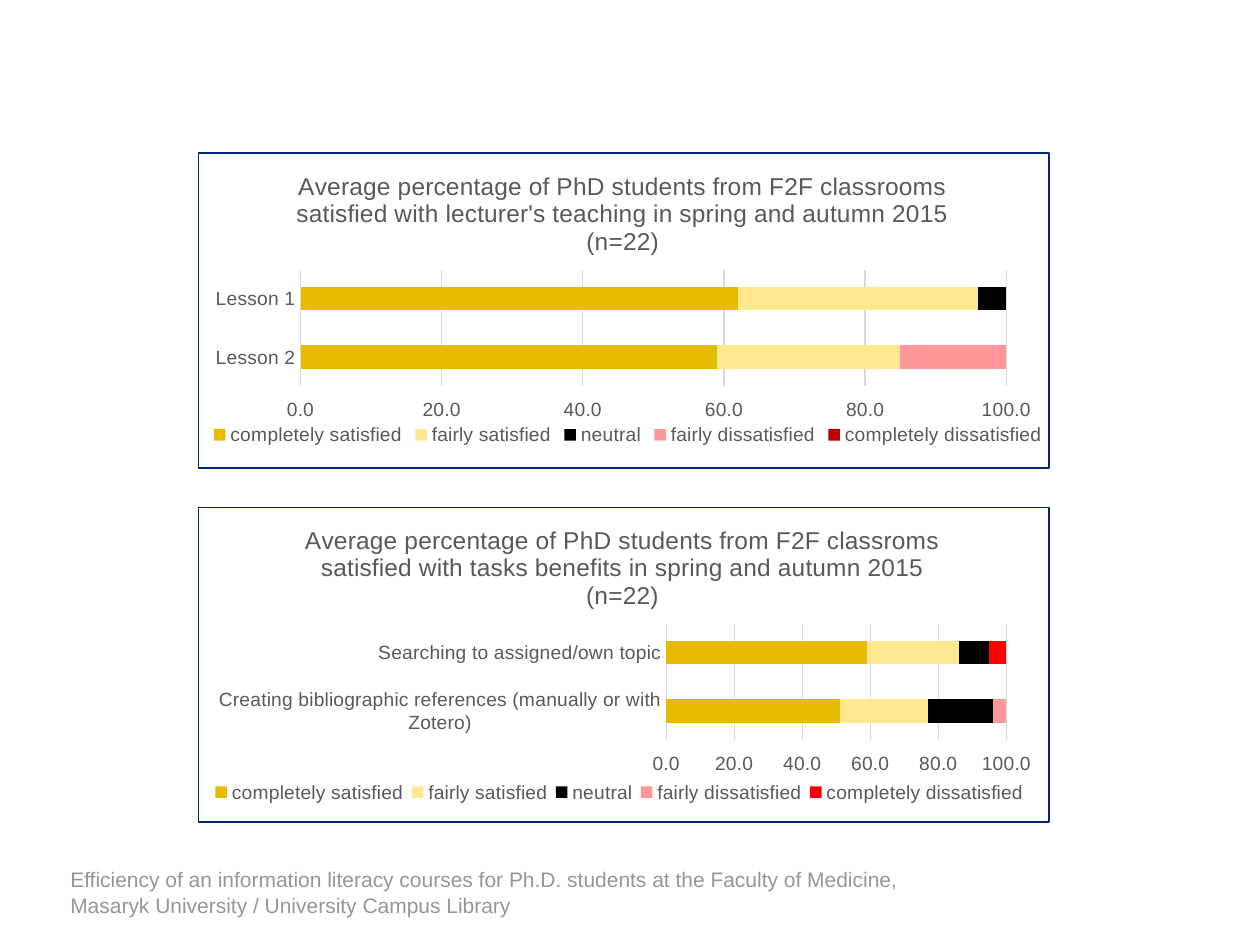
from lxml import etree
from pptx import Presentation
from pptx.chart.data import CategoryChartData
from pptx.dml.color import RGBColor
from pptx.enum import chart as ch, text
from pptx.oxml import parse_xml
from pptx.oxml.ns import nsdecls, qn
from pptx.util import Inches, Pt

COLORS = {
    "footer": "969696",
    "label": "595959",
    "grid": "D9D9D9",
    "border": "00287D",
    "paper": "FFFFFF",
    "gold": "E7BB01",
    "cream": "FFE990",
    "black": "000000",
    "pink": "FF9999",
    "dark_red": "C00000",
    "red": "FF0000",
}
ANSWERS = ["completely satisfied", "fairly satisfied", "neutral",
           "fairly dissatisfied", "completely dissatisfied"]
ANSWER_COLORS = ["gold", "cream", "black", "pink"]


def rgb(name):
    return RGBColor.from_string(COLORS[name])


def style_font(font, size, color):
    font.name = "Arial"
    font.size = Pt(size)
    font.bold = False
    font.color.rgb = rgb(color)


def write(frame, wording, size=12, color="label", align=None):
    paragraph = frame.paragraphs[0]
    paragraph.alignment = align
    run = paragraph.add_run()
    run.text = wording
    style_font(run.font, size, color)


def place(parent, before, inner=False, **fractions):
    for old in parent.findall(qn("c:layout")):
        parent.remove(old)
    layout = parse_xml(f"<c:layout {nsdecls('c')}><c:manualLayout/></c:layout>")
    settings = {"layoutTarget": "inner"} if inner else {}
    settings.update(xMode="edge", yMode="edge", **fractions)
    for tag, value in settings.items():
        etree.SubElement(layout[0], qn(f"c:{tag}")).set("val", str(value))
    parent.find(qn(f"c:{before}")).addprevious(layout)


class SurveySlide:
    def __init__(self, deck):
        self.slide = deck.slides.add_slide(deck.slide_layouts[6])

    def footer(self, wording, left, top, width, height):
        frame = self.slide.shapes.add_textbox(
            Inches(left), Inches(top), Inches(width), Inches(height)).text_frame
        frame.word_wrap = True
        frame.vertical_anchor = text.MSO_ANCHOR.BOTTOM
        write(frame, wording, color="footer")

    def survey(self, top, title, title_x, lessons, ratings, last_color, plot, legend):
        data = CategoryChartData(number_format="0.0")
        data.categories = lessons
        for answer, values in zip(ANSWERS, ratings):
            data.add_series(answer, values)
        chart = self.slide.shapes.add_chart(
            ch.XL_CHART_TYPE.BAR_STACKED, Inches(1.57), Inches(top),
            Inches(6.76), Inches(2.51), data).chart
        style_font(chart.font, 10, "black")
        self.border(chart)
        self.title(chart, title, title_x)
        self.axes(chart)
        bars = chart.plots[0]
        bars.gap_width = 150
        bars.overlap = 100
        bars.vary_by_categories = False
        for series, color in zip(bars.series, ANSWER_COLORS + [last_color]):
            series.format.fill.solid()
            series.format.fill.fore_color.rgb = rgb(color)
        chart.has_legend = True
        chart.legend.position = ch.XL_LEGEND_POSITION.BOTTOM
        chart.legend.include_in_layout = False
        style_font(chart.legend.font, 11, "label")
        chart_xml = chart.element.find(qn("c:chart"))
        place(chart_xml.find(qn("c:legend")), "overlay", **legend)
        place(chart_xml.find(qn("c:plotArea")), "barChart", inner=True, **plot)

    def border(self, chart):
        chart.element.find(qn("c:chart")).addnext(parse_xml(
            f"<c:spPr {nsdecls('c', 'a')}>"
            f"<a:solidFill><a:srgbClr val='{COLORS['paper']}'/></a:solidFill>"
            f"<a:ln w='{Pt(0.75)}'><a:solidFill>"
            f"<a:srgbClr val='{COLORS['border']}'/></a:solidFill></a:ln></c:spPr>"))

    def title(self, chart, wording, x):
        chart.has_title = True
        write(chart.chart_title.text_frame, wording, size=14,
              align=text.PP_ALIGN.CENTER)
        chart.chart_title.include_in_layout = False
        place(chart.element.find(qn("c:chart")).find(qn("c:title")),
              "overlay", x=x, y=0.04)

    def axes(self, chart):
        for axis in (chart.category_axis, chart.value_axis):
            axis.major_tick_mark = axis.minor_tick_mark = ch.XL_TICK_MARK.NONE
            style_font(axis.tick_labels.font, 11, "label")
        lessons, percent = chart.category_axis, chart.value_axis
        lessons.reverse_order = True
        percent.tick_label_position = ch.XL_TICK_LABEL_POSITION.HIGH
        percent.minimum_scale = 0
        percent.maximum_scale = 100
        percent.major_unit = 20
        percent.has_major_gridlines = True
        percent.tick_labels.number_format = "0.0"
        percent.tick_labels.number_format_is_linked = False
        percent.format.line.fill.background()
        for line in (lessons.format.line, percent.major_gridlines.format.line):
            line.width = Pt(0.75)
            line.color.rgb = rgb("grid")


def main():
    deck = Presentation()
    deck.slide_width, deck.slide_height = Inches(10), Inches(7.5)
    page = SurveySlide(deck)
    page.footer("Efficiency of an information literacy courses for Ph.D. students at "
                "the Faculty of Medicine, Masaryk University / University Campus Library",
                0.46, 6.83, 6.9, 0.5)
    page.survey(
        1.21, "Average percentage of PhD students from F2F classrooms satisfied with "
        "lecturer's teaching in spring and autumn 2015 (n=22)", 0.11,
        ["Lesson 1", "Lesson 2"],
        [(62, 59), (34, 26), (5, 0), (0, 15), (0, 0)], "dark_red",
        plot=dict(x=0.12, y=0.37, w=0.83, h=0.37),
        legend=dict(x=0.01, y=0.85, w=0.99, h=0.09))
    page.survey(
        4.02, "Average percentage of PhD students from F2F classroms satisfied with "
        "tasks benefits in spring and autumn 2015 (n=22)", 0.12,
        ["Searching to assigned/own topic",
         "Creating bibliographic references (manually or with Zotero)"],
        [(59, 51), (27, 26), (9, 19), (0, 5), (5, 0)], "red",
        plot=dict(x=0.55, y=0.37, w=0.4, h=0.37),
        legend=dict(x=0.01, y=0.86, w=0.97, h=0.09))
    deck.save("out.pptx")


if __name__ == "__main__":
    main()
